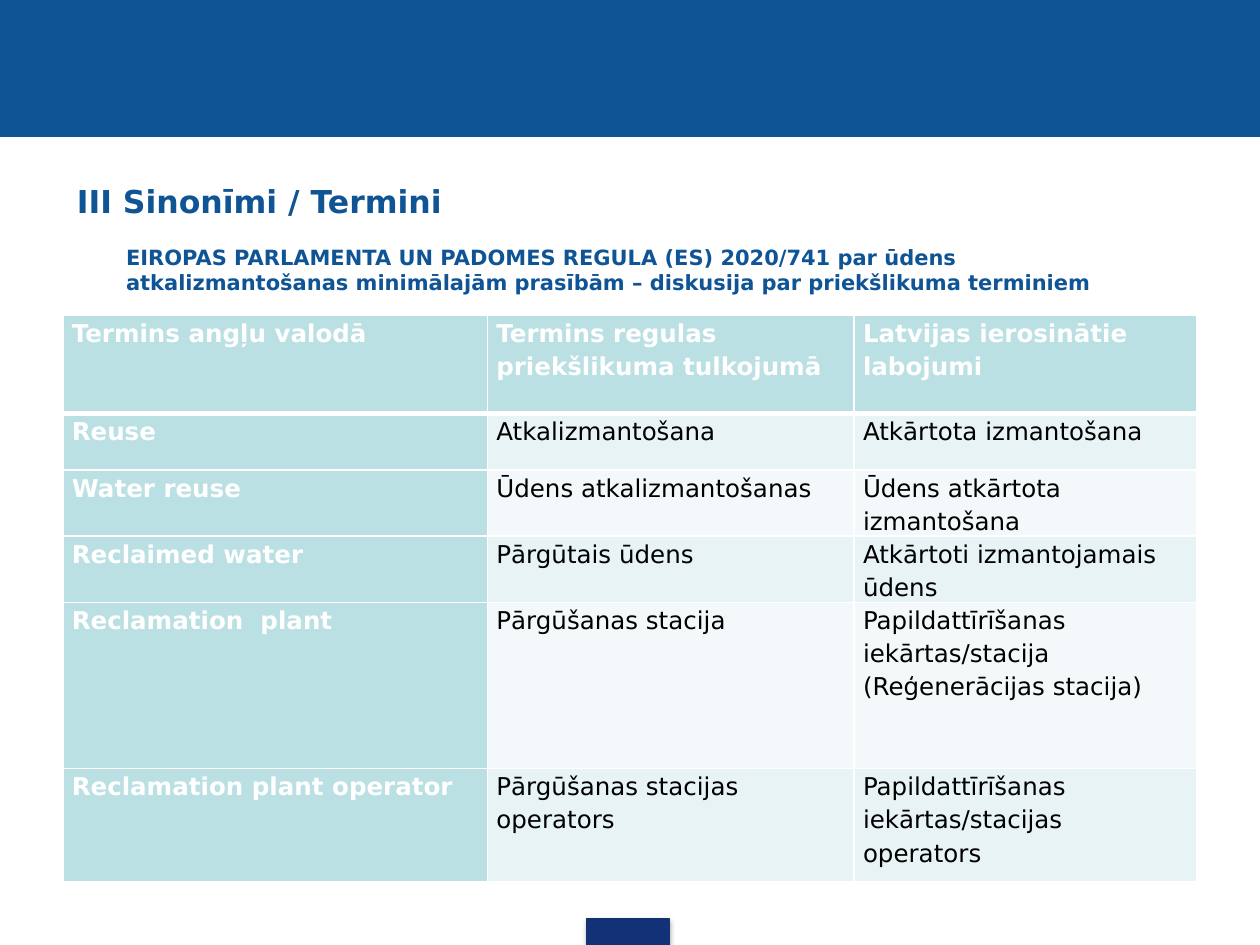
from lxml import etree
from pptx import Presentation
from pptx.dml.color import RGBColor
from pptx.enum import shapes, text
from pptx.oxml import ns
from pptx.util import Inches, Pt

THEME = {
    "font": "DejaVu Sans",
    "blue": "0F5494", "navy": "133176", "white": "FFFFFF", "black": "000000",
    "teal": "BBE0E3", "bands": ["E7F3F4", "F3F9FA"],
    "title": 18, "subtitle": 12, "cell": 14,
}


def write(p, words, size, color, bold):
    r = p.add_run()
    r.text = words
    for name, value in {"name": THEME["font"], "size": Pt(size), "bold": bold}.items():
        setattr(r.font, name, value)
    r.font.color.rgb = RGBColor.from_string(color)


def add_xml(parent, tag, **attributes):
    e = etree.SubElement(parent, ns.qn(tag))
    for name, value in attributes.items():
        e.set(name, str(value))
    return e


prs = Presentation()
prs.slide_width, prs.slide_height = Inches(10), Inches(7.5)
s = prs.slides.add_slide(prs.slide_layouts[5])

# Top band and footer tab
for box, color in [((0, 0, 10, 1.08), "blue"), ((4.66, 7.29, 0.65, 0.22), "navy")]:
    sp = s.shapes.add_shape(shapes.MSO_SHAPE.RECTANGLE, *map(Inches, box))
    sp.shadow.inherit = False
    sp.fill.solid()
    sp.fill.fore_color.rgb = sp.line.color.rgb = RGBColor.from_string(THEME[color])
    sp.line.width = Pt(0.75)

# Soft shadow under the footer tab
effects = sp._element.spPr.find(ns.qn("a:effectLst"))
shadow = add_xml(effects, "a:outerShdw", blurRad=Pt(3.1), dist=Pt(1.8),
                 dir=90 * 60000, rotWithShape=0)
add_xml(add_xml(shadow, "a:srgbClr", val=THEME["black"]), "a:alpha", val=35000)

# Title and subtitle
title = s.shapes.title
title.left, title.top, title.width, title.height = map(Inches, (0.51, 1.7, 9, 0.39))
tf = title.text_frame
for name, value in {"word_wrap": True, "auto_size": text.MSO_AUTO_SIZE.NONE,
                    "vertical_anchor": text.MSO_ANCHOR.MIDDLE}.items():
    setattr(tf, name, value)
heading, subtitle = tf.paragraphs[0], tf.add_paragraph()
write(heading, "III Sinonīmi / Termini", THEME["title"], THEME["blue"], True)
write(subtitle, "EIROPAS PARLAMENTA UN PADOMES REGULA (ES) 2020/741 par ūdens "
      "atkalizmantošanas minimālajām prasībām – diskusija par priekšlikuma terminiem",
      THEME["subtitle"], THEME["blue"], True)
for p in (heading, subtitle):
    p.alignment = text.PP_ALIGN.LEFT
subtitle.space_before = Pt(14)
subtitle._p.get_or_add_pPr().set("marL", str(Inches(0.39)))

# Table of terms
rows = [
    ("Termins angļu valodā", "Termins regulas priekšlikuma tulkojumā",
     "Latvijas ierosinātie labojumi"),
    ("Reuse", "Atkalizmantošana", "Atkārtota izmantošana"),
    ("Water reuse", "Ūdens atkalizmantošanas", "Ūdens atkārtota izmantošana"),
    ("Reclaimed water", "Pārgūtais ūdens", "Atkārtoti izmantojamais ūdens"),
    ("Reclamation  plant", "Pārgūšanas stacija",
     "Papildattīrīšanas iekārtas/stacija (Reģenerācijas stacija)"),
    ("Reclamation plant operator", "Pārgūšanas stacijas operators",
     "Papildattīrīšanas iekārtas/stacijas operators"),
]
widths = [3.37, 2.91, 2.72]
heights = [0.78, 0.45, 0.52, 0.52, 1.32, 0.9]
table = s.shapes.add_table(len(rows), len(widths), Inches(0.5), Inches(2.5),
                           Inches(sum(widths)), Inches(sum(heights))).table
table.first_col = True
for column, width in zip(table.columns, widths):
    column.width = Inches(width)

for i, (row, height) in enumerate(zip(rows, heights)):
    table.rows[i].height = Inches(height)
    for j, words in enumerate(row):
        cell = table.cell(i, j)
        label = i == 0 or j == 0
        for name, value in {"margin_left": Inches(0.07), "margin_right": Inches(0.07),
                            "margin_top": 0, "margin_bottom": 0,
                            "vertical_anchor": text.MSO_ANCHOR.TOP}.items():
            setattr(cell, name, value)
        p = cell.text_frame.paragraphs[0]
        p.line_spacing = 1.15
        write(p, words, THEME["cell"], THEME["white" if label else "black"], label)

        # Borders go before the fill; the rule under the header is thicker
        tcPr = cell._tc.get_or_add_tcPr()
        for side in "LRTB":
            thick = (i, side) in [(0, "B"), (1, "T")]
            ln = add_xml(tcPr, f"a:ln{side}", w=Pt(3 if thick else 1))
            add_xml(add_xml(ln, "a:solidFill"), "a:srgbClr", val=THEME["white"])
        cell.fill.solid()
        cell.fill.fore_color.rgb = RGBColor.from_string(
            THEME["teal"] if label else THEME["bands"][(i - 1) % 2])

prs.save("out.pptx")
